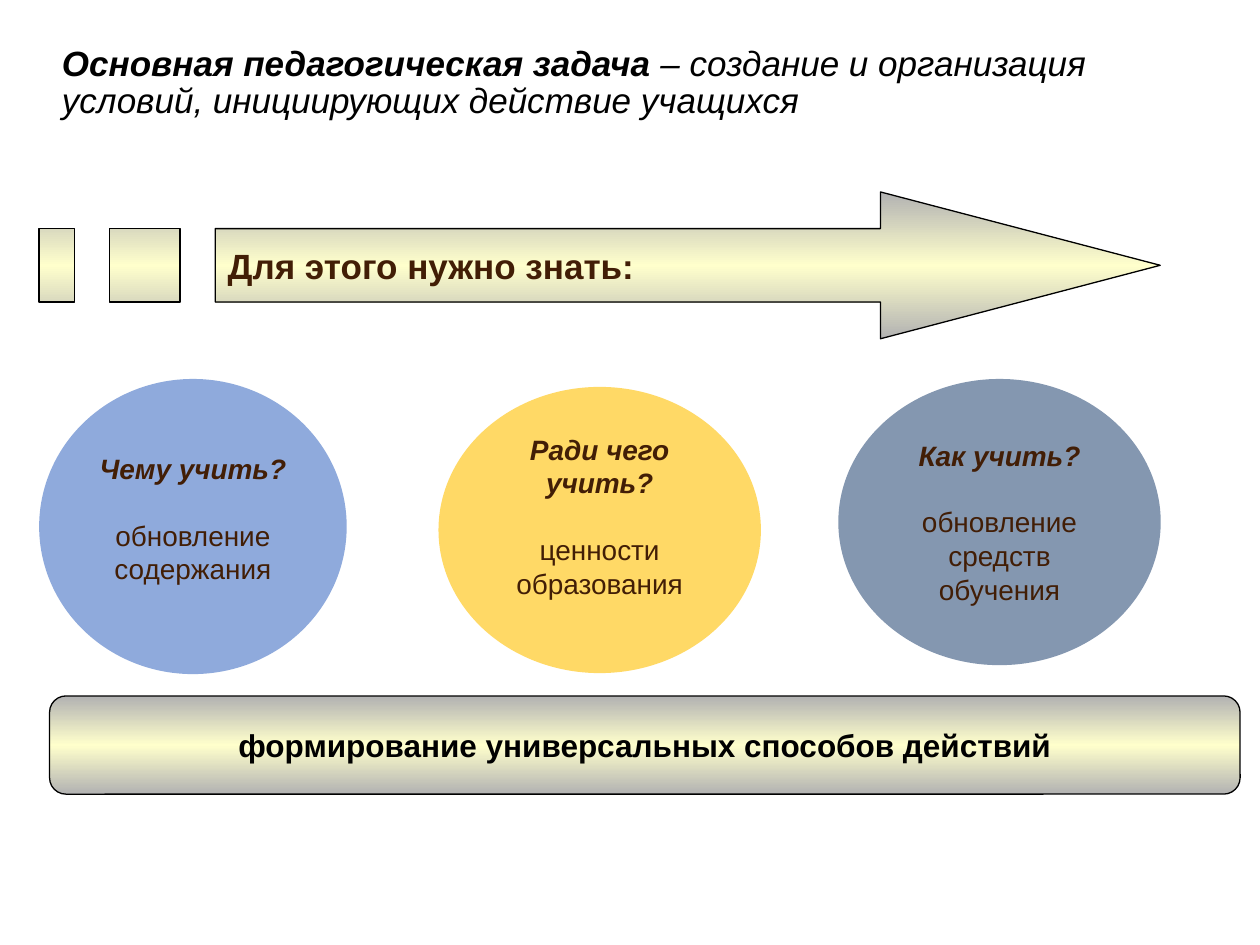
from copy import deepcopy
from dataclasses import dataclass

from pptx import Presentation
from pptx.dml.color import RGBColor
from pptx.enum.shapes import MSO_SHAPE
from pptx.enum.text import MSO_ANCHOR, PP_ALIGN
from pptx.oxml.ns import qn
from pptx.util import Cm, Pt


@dataclass(frozen=True)
class Theme:
    font: str = "Arial"
    black: str = "000000"
    brown: str = "421E06"
    blue: str = "8FAADC"
    yellow: str = "FFD966"
    slate: str = "8497B0"
    gradient_edge: str = "B2B2B2"
    gradient_middle: str = "FFFFCC"
    heading_size: int = 20
    bar_size: int = 18
    circle_size: int = 16
    circle_gap: int = 19
    outline: float = 0.75


THEME = Theme()


def style_font(font, size, color, bold=False, italic=False):
    font.name = THEME.font
    font.size = Pt(size)
    font.color.rgb = RGBColor.from_string(color)
    font.bold = bold
    font.italic = italic


def fill_band(shape):
    """Grey to cream to grey vertical gradient with a thin black outline."""
    shape.shadow.inherit = False
    fill = shape.fill
    fill.gradient()
    fill.gradient_angle = 90
    for stop in fill.gradient_stops:
        stop.color.rgb = RGBColor.from_string(THEME.gradient_edge)
    stops = shape.element.spPr.find(qn("a:gradFill")).find(qn("a:gsLst"))
    stops.insert(1, deepcopy(stops[0]))
    middle = fill.gradient_stops[1]
    middle.position = 0.5
    middle.color.rgb = RGBColor.from_string(THEME.gradient_middle)
    shape.line.color.rgb = RGBColor.from_string(THEME.black)
    shape.line.width = Pt(THEME.outline)


def write_label(shape, text, size, color, align):
    tf = shape.text_frame
    tf.word_wrap = True
    tf.vertical_anchor = MSO_ANCHOR.MIDDLE
    p = tf.paragraphs[0]
    p.text = text
    p.alignment = align
    style_font(p.font, size, color, bold=True)


def add_heading(s, lead, rest):
    tf = s.shapes.add_textbox(Cm(1), Cm(0.8), Cm(23.83), Cm(16.23)).text_frame
    tf.word_wrap = True
    p = tf.paragraphs[0]
    p.line_spacing = 0.9
    for text, bold in ((lead, True), (rest, False)):
        r = p.add_run()
        r.text = text
        style_font(r.font, THEME.heading_size, THEME.black, bold, italic=True)


def add_striped_arrow(s, text):
    left, neck, tip = 0.79, 17.75, 23.39
    stripe = 0.71
    top, quarter = 3.87, 0.74
    upper, center, lower, bottom = (top + quarter * n for n in range(1, 5))
    shaft = left + 5 * stripe
    outlines = [[(neck, top), (neck, upper), (shaft, upper), (shaft, lower),
                 (neck, lower), (neck, bottom), (tip, center)]]
    for start, end in ((2, 4), (0, 1)):
        x1, x2 = left + start * stripe, left + end * stripe
        outlines.append([(x1, upper), (x1, lower), (x2, lower), (x2, upper)])

    builder = None
    for outline in outlines:
        first, *others = [(Cm(x), Cm(y)) for x, y in outline]
        if builder is None:
            builder = s.shapes.build_freeform(*first)
        else:
            builder.move_to(*first)
        builder.add_line_segments(others, close=True)
    arrow = builder.convert_to_shape()
    fill_band(arrow)
    write_label(arrow, text, THEME.heading_size, THEME.brown, PP_ALIGN.LEFT)
    arrow.text_frame.margin_left = Cm(shaft - left + 0.25)


def add_circle(s, box, color, question, answer, lift=0):
    """Ellipse with a bold question above its answer; lift raises the text."""
    sp = s.shapes.add_shape(MSO_SHAPE.OVAL, *map(Cm, box))
    sp.shadow.inherit = False
    sp.fill.solid()
    sp.fill.fore_color.rgb = RGBColor.from_string(color)
    sp.line.fill.background()
    tf = sp.text_frame
    tf.word_wrap = False
    tf.vertical_anchor = MSO_ANCHOR.MIDDLE
    tf.margin_bottom = Cm(0.13 + lift)
    for i, text in enumerate(question + answer):
        p = tf.paragraphs[0] if i == 0 else tf.add_paragraph()
        p.text = text
        p.alignment = PP_ALIGN.CENTER
        if i == len(question):
            p.space_before = Pt(THEME.circle_gap)
        asking = i < len(question)
        style_font(p.font, THEME.circle_size, THEME.brown, asking, asking)


def add_bar(s, text):
    bar = s.shapes.add_shape(MSO_SHAPE.ROUNDED_RECTANGLE,
                             Cm(1), Cm(14.03), Cm(24), Cm(1.98))
    fill_band(bar)
    write_label(bar, text, THEME.bar_size, THEME.black, PP_ALIGN.CENTER)


def main():
    prs = Presentation()
    prs.slide_width, prs.slide_height = Cm(25.4), Cm(19.05)
    s = prs.slides.add_slide(prs.slide_layouts[6])
    add_heading(s, "Основная педагогическая задача ",
                "– создание и организация условий, инициирующих действие учащихся")
    add_circle(s, (16.9, 7.64, 6.5, 5.77), THEME.slate,
               ["Как учить?"], ["обновление", "средств", "обучения"])
    add_circle(s, (8.84, 7.8, 6.5, 5.77), THEME.yellow,
               ["Ради чего", "учить?"], ["ценности", "образования"], lift=0.56)
    add_circle(s, (0.79, 7.64, 6.2, 5.95), THEME.blue,
               ["Чему учить?"], ["обновление", "содержания"], lift=0.33)
    add_striped_arrow(s, "Для этого нужно знать:")
    add_bar(s, "формирование универсальных способов действий")
    prs.save("out.pptx")


if __name__ == "__main__":
    main()
